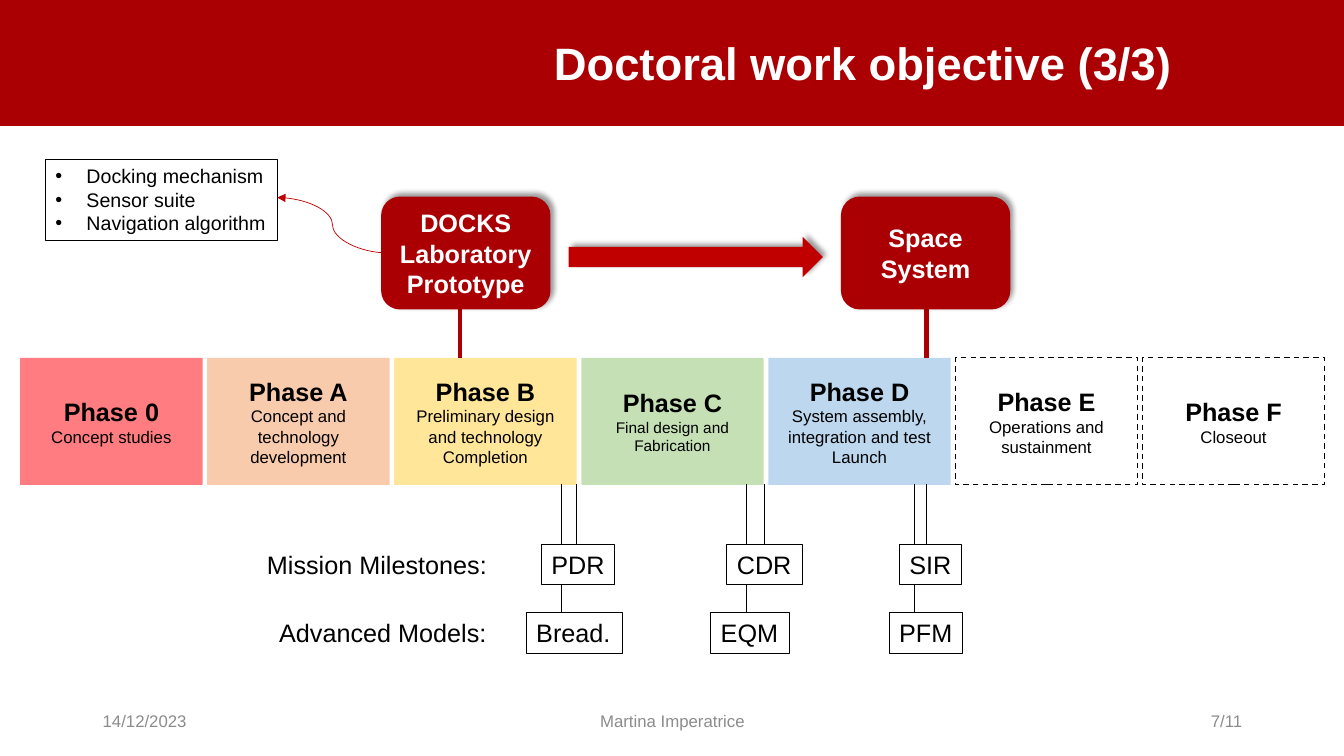
from lxml.etree import SubElement
from pptx import Presentation
from pptx.dml.color import RGBColor
from pptx.enum.dml import MSO_LINE
from pptx.enum.shapes import MSO_CONNECTOR, MSO_SHAPE
from pptx.enum.text import MSO_ANCHOR, MSO_AUTO_SIZE, PP_ALIGN
from pptx.oxml.ns import qn
from pptx.util import Inches, Pt

COLORS = {
    "red": "AA0004", "arrow": "C00000", "black": "000000", "white": "FFFFFF",
    "grey": "8C8C8C", "rose": "FF7C80", "peach": "F8CBAD", "yellow": "FFE699",
    "green": "C5E0B4", "blue": "BDD7EE",
}
# Name, fill (None for a dashed outline), description size, description
PHASES = [
    ("Phase 0", "rose", 12, ["Concept studies"]),
    ("Phase A", "peach", 12, ["Concept and technology development"]),
    ("Phase B", "yellow", 12, ["Preliminary design and technology Completion"]),
    ("Phase C", "green", 11, ["Final design and Fabrication"]),
    ("Phase D", "blue", 12, ["System assembly, integration and test", "Launch"]),
    ("Phase E", None, 12, ["Operations and sustainment"]),
    ("Phase F", None, 12, ["Closeout"]),
]
# Long line x, short line x, then (text, left, width) of milestone and model
MILESTONES = [
    (5.57, 5.72, ("PDR", 5.37, 0.73), ("Bread.", 5.22, 0.95)),
    (7.4, 7.58, ("CDR", 7.21, 0.75), ("EQM", 7.05, 0.78)),
    (9.07, 9.19, ("SIR", 8.92, 0.62), ("PFM", 8.82, 0.73)),
]


def rgb(name):
    return RGBColor.from_string(COLORS[name])


def style_para(para, size, color="black", bold=False, align=PP_ALIGN.LEFT):
    para.alignment = align
    font = para.font
    font.name, font.size, font.bold = "Arial", Pt(size), bold
    font.color.rgb = rgb(color)


def write(frame, lines, color="black", align=PP_ALIGN.LEFT, anchor=MSO_ANCHOR.MIDDLE):
    """Write (text, size, bold) lines, one paragraph each."""
    frame.word_wrap = True
    frame.vertical_anchor = anchor
    for index, (text, size, bold) in enumerate(lines):
        para = frame.paragraphs[0] if index == 0 else frame.add_paragraph()
        para.text = text
        style_para(para, size, color, bold, align)


def add_block(page, kind, box, fill):
    block = page.shapes.add_shape(kind, *map(Inches, box))
    block.shadow.inherit = False
    block.line.fill.background()
    if fill:
        block.fill.solid()
        block.fill.fore_color.rgb = rgb(fill)
    else:
        block.fill.background()
    return block


def add_shadow(block):
    effects = block._element.spPr.find(qn("a:effectLst"))
    shadow = SubElement(effects, qn("a:outerShdw"), blurRad=str(Pt(4)), dist=str(Pt(3)),
                        dir=str(315 * 60000), algn="bl", rotWithShape="0")
    color = SubElement(shadow, qn("a:srgbClr"), val=COLORS["black"])
    SubElement(color, qn("a:alpha"), val="40000")


def add_line(page, start, end, color, width, kind=MSO_CONNECTOR.STRAIGHT):
    line = page.shapes.add_connector(kind, *map(Inches, start + end))
    line.line.color.rgb = rgb(color)
    line.line.width = Pt(width)
    SubElement(line._element.spPr, qn("a:effectLst"))
    return line


def add_text(page, box, text, size, color="black", align=PP_ALIGN.LEFT,
             anchor=MSO_ANCHOR.TOP):
    label = page.shapes.add_textbox(*map(Inches, box))
    write(label.text_frame, [(text, size, False)], color, align, anchor)
    return label


def outline(shape):
    shape.line.color.rgb = rgb("black")
    shape.line.width = Pt(0.75)


def add_header(page, box):
    left, top, width, height = box
    band = add_block(page, MSO_SHAPE.RECTANGLE, box, "red")
    title = page.shapes.title
    title.left, title.top = Inches(left + 3.16), Inches(top + 0.37)
    title.width, title.height = Inches(width - 4.77), Inches(0.56)
    write(title.text_frame, [("Doctoral work objective (3/3)", 32.4, True)],
          "white", PP_ALIGN.RIGHT)
    title.text_frame.auto_size = MSO_AUTO_SIZE.NONE
    title.text_frame.paragraphs[0].line_spacing = 0.9
    band._element.addnext(title._element)  # title in front of the band


def add_footer(page, box):
    left, top, width, height = box
    third = 3
    step = (width - third) / 2
    parts = [("14/12/2023", PP_ALIGN.LEFT), ("Martina Imperatrice", PP_ALIGN.CENTER),
             ("7/11", PP_ALIGN.RIGHT)]
    for index, (text, align) in enumerate(parts):
        add_text(page, (left + index * step, top, third, height), text, 12, "grey",
                 align, MSO_ANCHOR.MIDDLE)


def add_phases(page, box):
    left, top, width, height = box
    block_width = 1.81
    step = (width - block_width) / (len(PHASES) - 1)
    for index, (name, fill, size, details) in enumerate(PHASES):
        place = (left + index * step, top, block_width, height)
        block = add_block(page, MSO_SHAPE.RECTANGLE, place, fill)
        if not fill:
            outline(block)
            block.line.width = Pt(1)
            block.line.dash_style = MSO_LINE.DASH
        lines = [(name, 18, True)] + [(text, size, False) for text in details]
        write(block.text_frame, lines, align=PP_ALIGN.CENTER)


def add_systems(page, box):
    left, top, width, height = box
    bottom = top + height
    systems = [(left, ["DOCKS", "Laboratory Prototype"], 0.78),
               (left + width - 1.68, ["Space System"], 0.85)]
    for block_left, texts, stem in systems:
        add_line(page, (block_left + stem, bottom), (block_left + stem, bottom + 0.48),
                 "red", 3)
        block = add_block(page, MSO_SHAPE.ROUNDED_RECTANGLE,
                          (block_left, top, 1.68, height), "red")
        add_shadow(block)
        write(block.text_frame, [(text, 18, True) for text in texts], "white",
              PP_ALIGN.CENTER)
    arrow = add_block(page, MSO_SHAPE.RIGHT_ARROW, (left + 1.86, top + 0.4, 2.52, 0.4),
                      "arrow")
    add_shadow(arrow)


def add_components(page, box):
    left, top, width, height = box
    right = left + width
    # Curved arrow from the prototype
    curve = add_line(page, (right + 1.1, top + 0.93), (right, top + 0.38), "arrow", 0.5,
                     MSO_CONNECTOR.CURVE)
    SubElement(curve.line._get_or_add_ln(), qn("a:tailEnd"), type="triangle")
    # Bulleted list
    listing = page.shapes.add_textbox(*map(Inches, box))
    outline(listing)
    frame = listing.text_frame
    frame.word_wrap = True
    frame.text = "Docking mechanism\nSensor suite\nNavigation algorithm"
    for para in frame.paragraphs:
        props = para._p.get_or_add_pPr()
        props.set("marL", str(Inches(0.31)))
        props.set("indent", str(-Inches(0.31)))
        SubElement(props, qn("a:buFont"), typeface="Arial")
        SubElement(props, qn("a:buChar"), char="•")
        style_para(para, 14)


def add_milestones(page, box):
    left, top, width, height = box
    label_height = 0.4
    milestone_top, model_top = top + 0.6, top + height - label_height
    # Row names
    for text, row_top, name_width in [("Mission Milestones:", milestone_top, 2.4),
                                      ("Advanced Models:", model_top, 2.28)]:
        name = add_text(page, (left + 2.4 - name_width, row_top, name_width, label_height),
                        text, 18)
        name.text_frame.word_wrap = False
    # Lines, then the boxes over them
    for long_x, short_x, milestone, model in MILESTONES:
        add_line(page, (long_x, top), (long_x, model_top), "black", 0.5)
        add_line(page, (short_x, top), (short_x, milestone_top), "black", 0.5)
        for (text, label_left, label_width), row_top in [(milestone, milestone_top),
                                                         (model, model_top)]:
            label = add_text(page, (label_left, row_top, label_width, label_height), text, 18)
            label.text_frame.word_wrap = False
            label.fill.solid()
            label.fill.fore_color.rgb = rgb("white")
            outline(label)


def main():
    deck = Presentation()
    deck.slide_width, deck.slide_height = Inches(13.33), Inches(7.5)
    page = deck.slides.add_slide(deck.slide_layouts[5])
    add_header(page, (0, 0, 13.33, 1.25))
    add_footer(page, (0.92, 6.95, 11.5, 0.4))
    add_phases(page, (0.2, 3.55, 12.94, 1.26))
    add_components(page, (0.45, 1.58, 2.3, 0.81))
    add_systems(page, (3.78, 1.95, 6.24, 1.12))
    add_milestones(page, (2.55, 4.8, 7, 1.68))
    deck.save("out.pptx")


if __name__ == "__main__":
    main()
